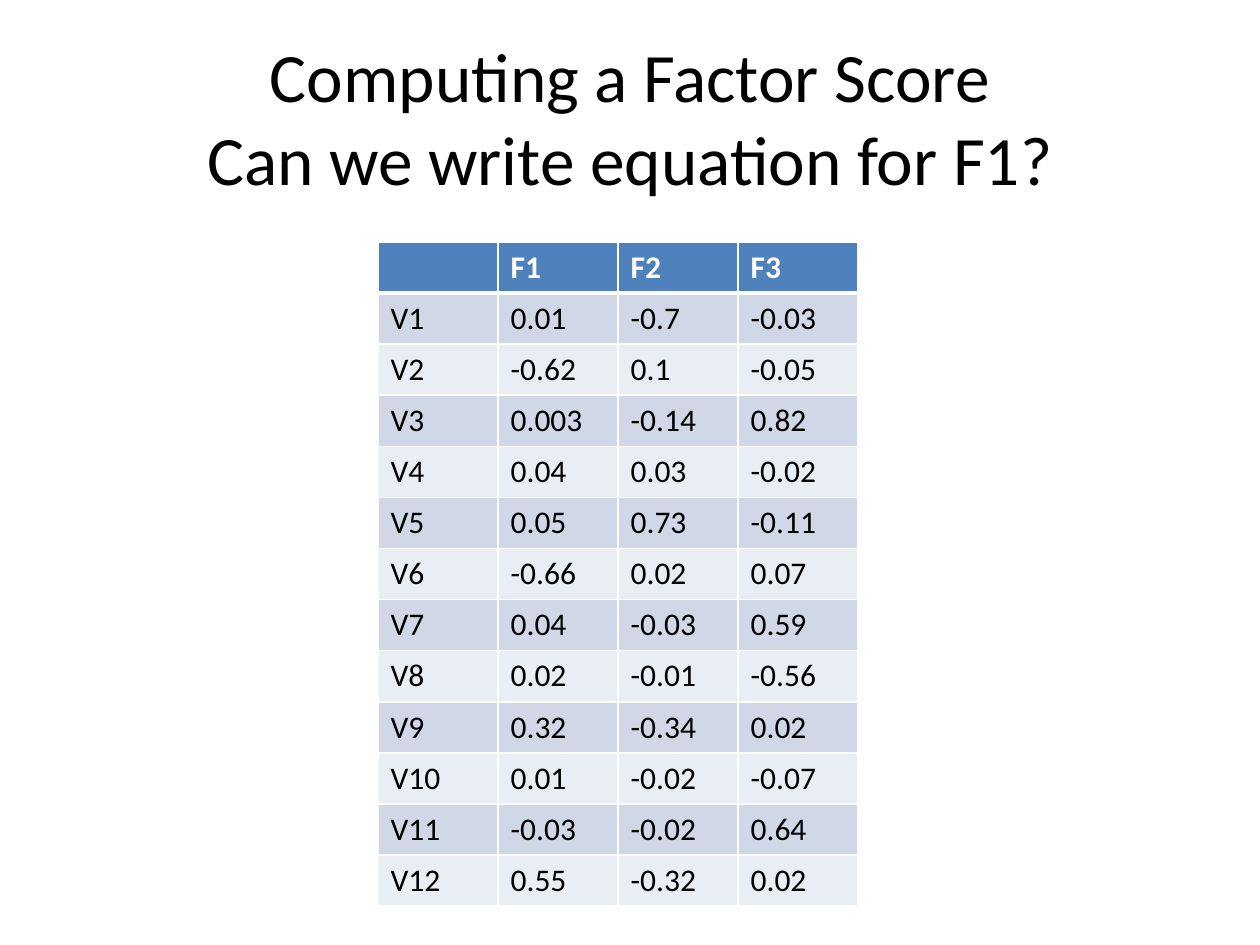
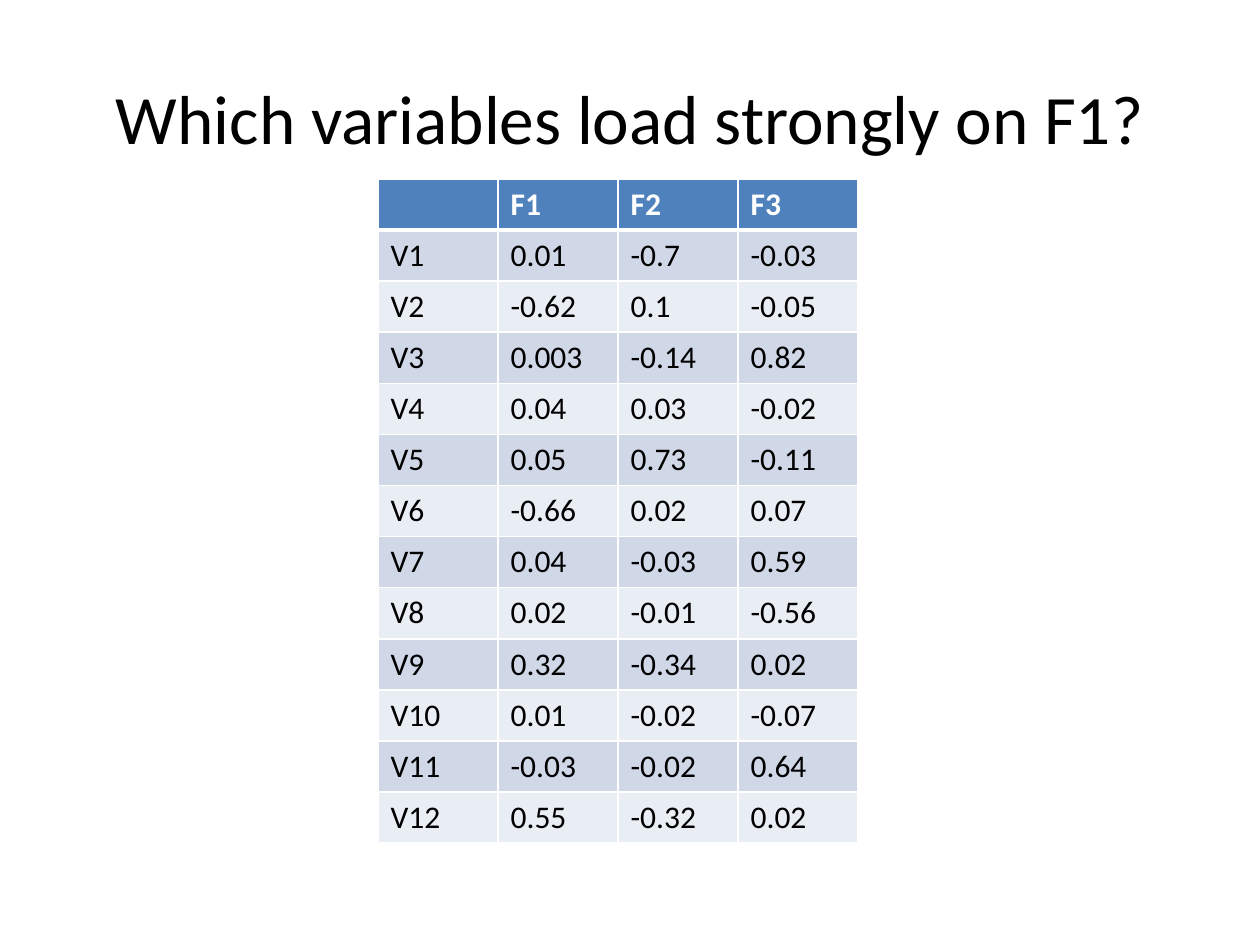
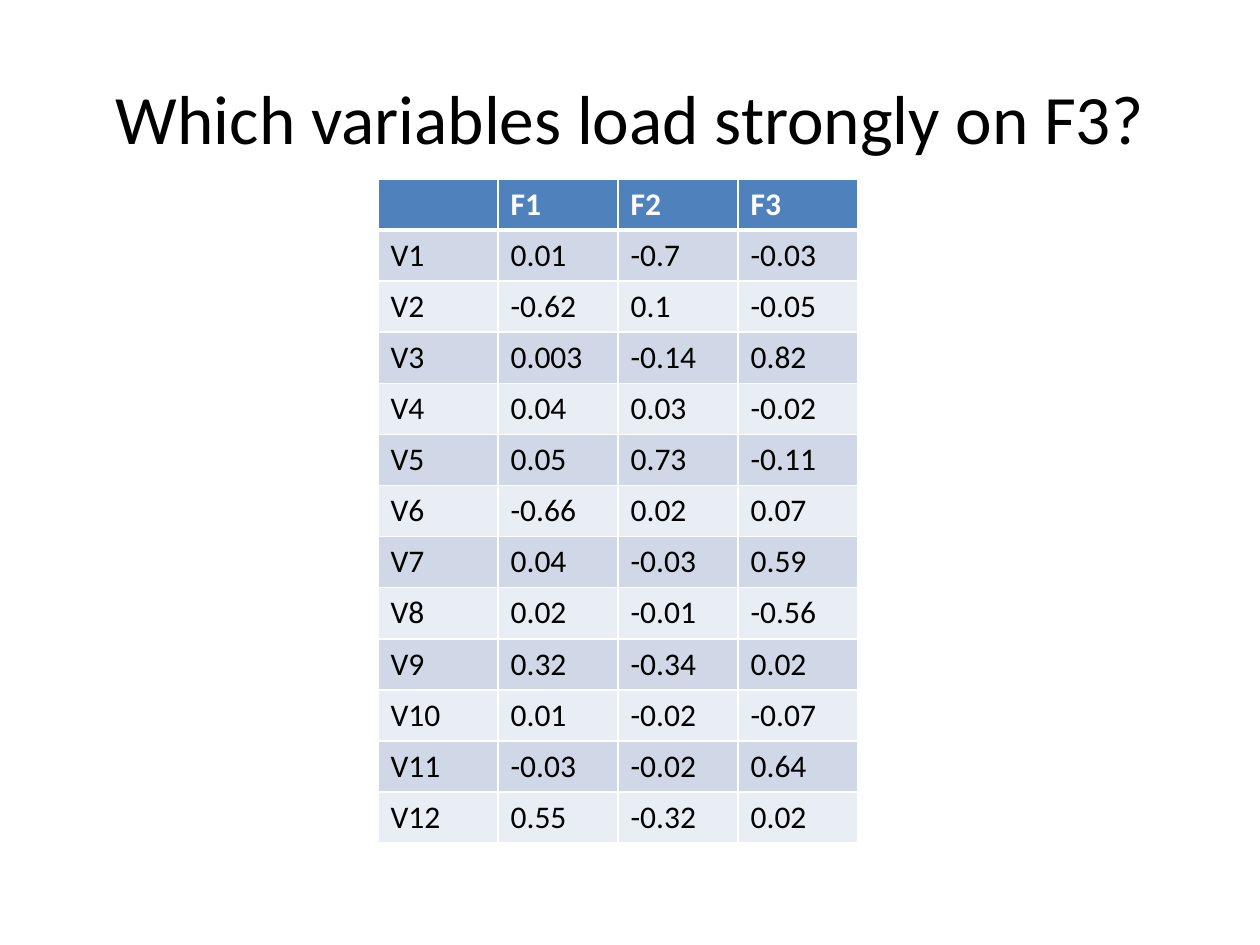
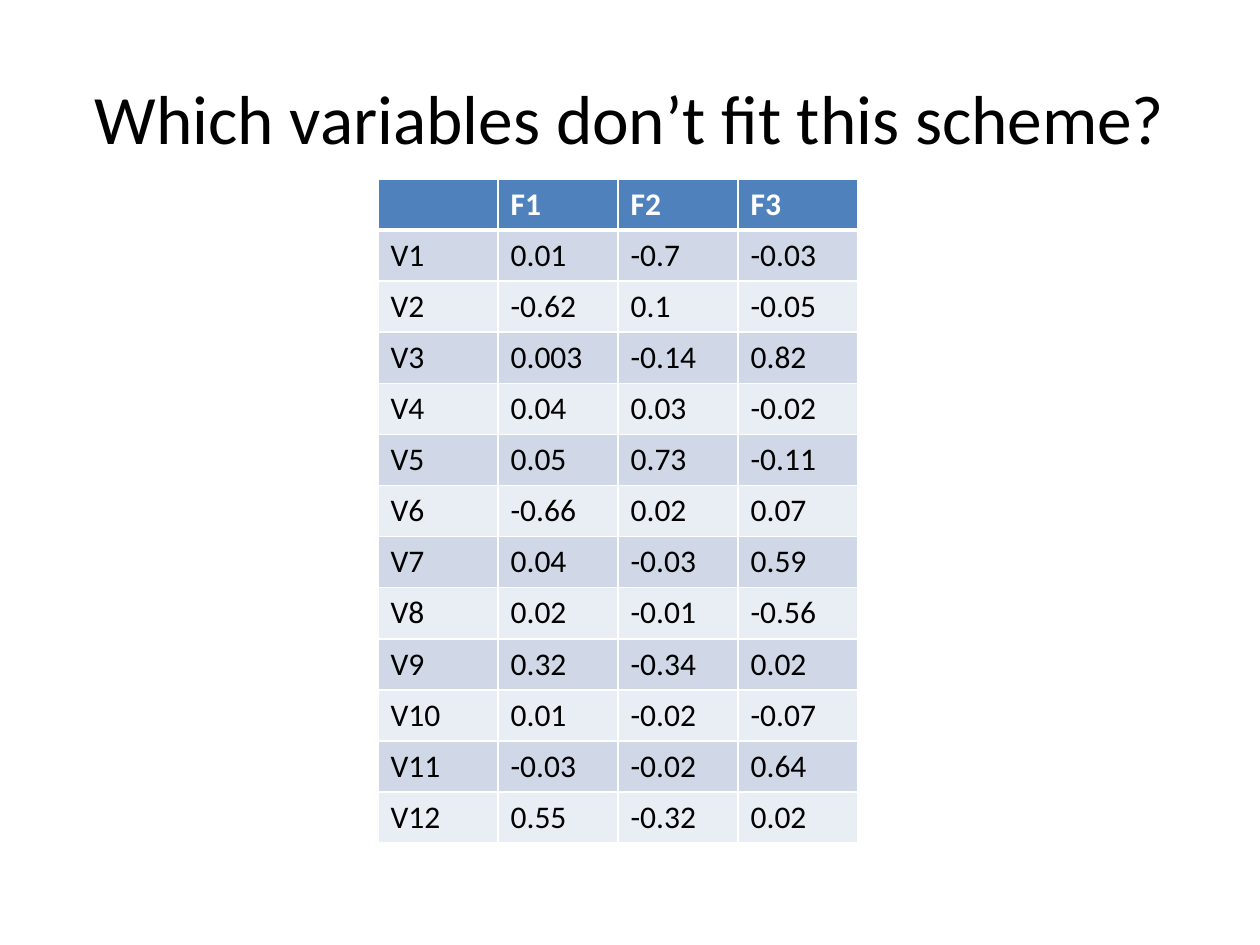
from lxml.etree import SubElement
from pptx import Presentation
from pptx.dml.color import RGBColor as RGB
from pptx.enum.text import MSO_ANCHOR as Anchor, MSO_AUTO_SIZE as AutoSize, PP_ALIGN as Align
from pptx.oxml import parse_xml
from pptx.oxml.ns import nsdecls, qn
from pptx.util import Inches, Pt

COLORS = {"text": "000000", "white": "FFFFFF", "header": "4F81BD",
          "odd": "D0D8E8", "even": "E9EDF4"}
FONT = "Calibri"
TITLE_BOX = (0.5, 0.3, 9, 1.25)
TABLE_LEFT, TABLE_WIDTH, TABLE_HEIGHT = 3, 3.81, 5.27

FACTORS = ["", "F1", "F2", "F3"]
LOADINGS = [
    ("0.01", "-0.7", "-0.03"),
    ("-0.62", "0.1", "-0.05"),
    ("0.003", "-0.14", "0.82"),
    ("0.04", "0.03", "-0.02"),
    ("0.05", "0.73", "-0.11"),
    ("-0.66", "0.02", "0.07"),
    ("0.04", "-0.03", "0.59"),
    ("0.02", "-0.01", "-0.56"),
    ("0.32", "-0.34", "0.02"),
    ("0.01", "-0.02", "-0.07"),
    ("-0.03", "-0.02", "0.64"),
    ("0.55", "-0.32", "0.02"),
]
ROWS = [FACTORS] + [[f"V{i}", *values] for i, values in enumerate(LOADINGS, 1)]

SLIDES = [
    (["Computing a Factor Score", "Can we write equation for F1?"], 1.92),
    (["Which variables load strongly on F1?"], 1.42),
    (["Which variables load strongly on F3?"], 1.42),
    (["Which variables don’t fit this scheme?"], 1.42),
]


def add_run(p, text, size, color, bold=False):
    r = p.add_run()
    r.text = text
    r.font.name = FONT
    r.font.size = Pt(size)
    r.font.bold = bold
    r.font.color.rgb = RGB.from_string(COLORS[color])


def add_title(s, lines, box):
    sp = s.shapes.title
    sp.left, sp.top, sp.width, sp.height = map(Inches, box)
    tf = sp.text_frame
    tf.word_wrap = True
    tf.auto_size = AutoSize.NONE
    tf.vertical_anchor = Anchor.MIDDLE
    p = tf.paragraphs[0]
    p.alignment = Align.CENTER
    for i, line in enumerate(lines):
        if i:
            p.add_line_break()
        add_run(p, line, 39.6, "text")


def set_borders(cell, top, bottom):
    tc_pr = cell._tc.get_or_add_tcPr()
    widths = {"lnL": 1, "lnR": 1, "lnT": top, "lnB": bottom}
    for i, (side, width) in enumerate(widths.items()):
        ln = parse_xml(f'<a:{side} {nsdecls("a")} w="{Pt(width)}"/>')
        fill = SubElement(ln, qn("a:solidFill"))
        SubElement(fill, qn("a:srgbClr"), val=COLORS["white"])
        tc_pr.insert(i, ln)


def add_loadings(s, left, top, width, height):
    frame = s.shapes.add_table(len(ROWS), len(FACTORS), *map(Inches, (left, top, width, height)))
    table = frame.table
    for col in table.columns:
        col.width = Inches(width / len(FACTORS))
    for i, values in enumerate(ROWS):
        table.rows[i].height = Inches(height / len(ROWS))
        header = i == 0
        band = "header" if header else "odd" if i % 2 else "even"
        for j, value in enumerate(values):
            cell = table.cell(i, j)
            cell.fill.solid()
            cell.fill.fore_color.rgb = RGB.from_string(COLORS[band])
            set_borders(cell, top=3 if i == 1 else 1, bottom=3 if header else 1)
            if value:
                add_run(cell.text_frame.paragraphs[0], value, 18,
                        "white" if header else "text", header)


def add_slide(prs, lines, table_top):
    s = prs.slides.add_slide(prs.slide_layouts[5])
    add_title(s, lines, TITLE_BOX)
    add_loadings(s, TABLE_LEFT, table_top, TABLE_WIDTH, TABLE_HEIGHT)


def main():
    prs = Presentation()
    prs.slide_width, prs.slide_height = Inches(10), Inches(7.5)
    for lines, table_top in SLIDES:
        add_slide(prs, lines, table_top)
    prs.save("out.pptx")


if __name__ == "__main__":
    main()
